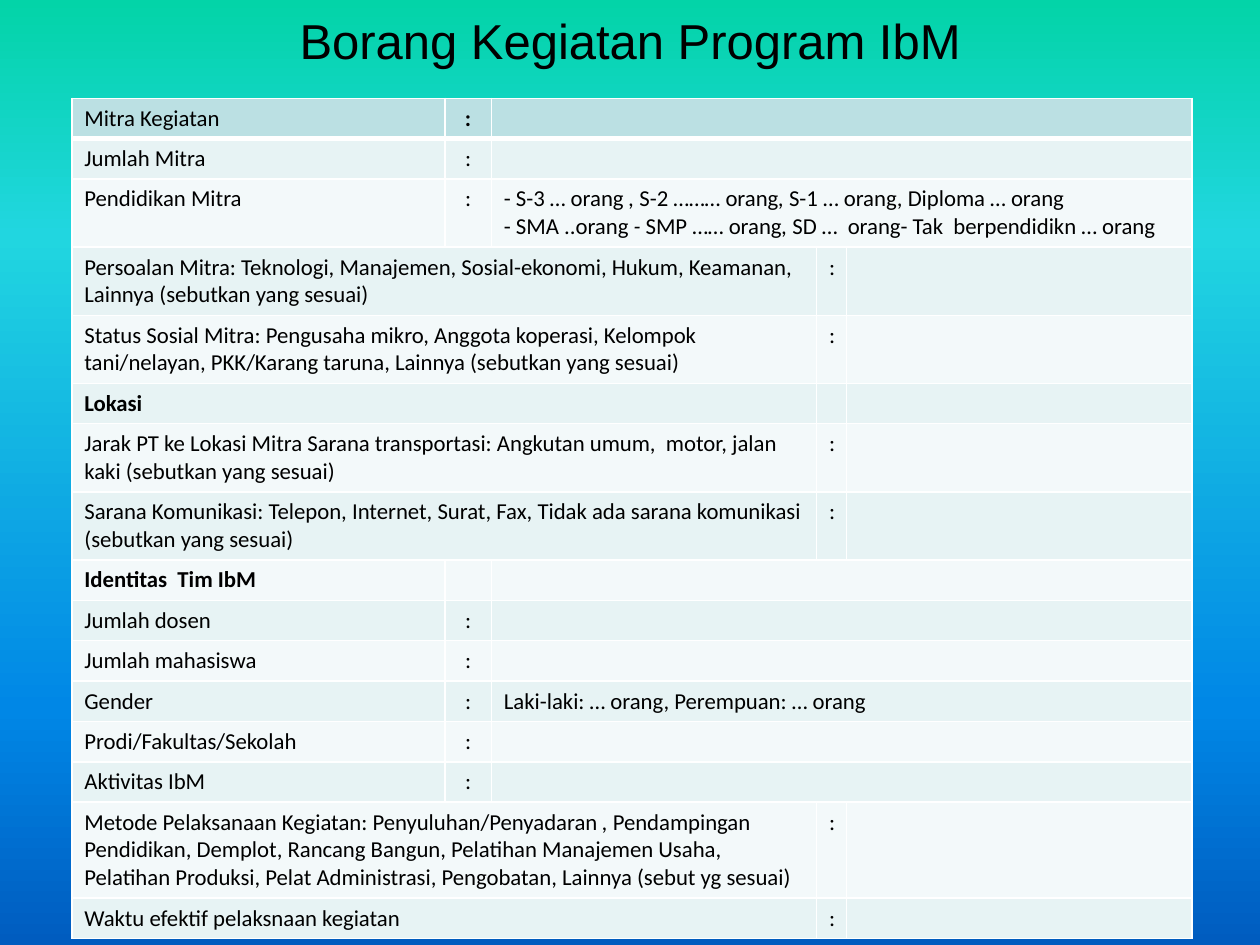
from lxml import etree
from pptx import Presentation
from pptx.dml.color import RGBColor
from pptx.enum.text import MSO_ANCHOR, PP_ALIGN
from pptx.oxml.ns import qn
from pptx.util import Inches, Pt

CENTER = PP_ALIGN.CENTER
LEFT = PP_ALIGN.LEFT
MIDDLE = MSO_ANCHOR.MIDDLE

GRADIENT = [(0, "03D4A8"), (25, "21D6E0"), (75, "0087E6"), (100, "005CBF")]
COLUMN_WIDTHS = [2.96, 0.37, 2.58, 0.23, 2.74]
LINE_HEIGHT = 0.22
CELL_PADDING = 0.1
HEADER_FILL = "BBE0E3"
BAND_FILLS = ["F3F9FA", "E7F3F4"]

NARROW, WIDE = 1, 3
PLAIN, BOLD = False, True
ROWS = [
    (NARROW, 1, PLAIN, "Mitra Kegiatan", ":", ""),
    (NARROW, 1, PLAIN, "Jumlah Mitra", ":", ""),
    (NARROW, 2, PLAIN, "Pendidikan Mitra", ":",
     "- S-3 … orang_ , _S-2 ……… orang_,_ S-1 … orang, Diploma … orang\n"
     "- SMA ..orang_ -_ SMP …… orang_,_ SD …  orang- Tak  berpendidikn … orang"),
    (WIDE, 2, PLAIN, "Persoalan Mitra: Teknologi, Manajemen, Sosial-ekonomi, Hukum, "
     "Keamanan, Lainnya (sebutkan yang sesuai)", ":", ""),
    (WIDE, 2, PLAIN, "Status Sosial Mitra: Pengusaha mikro, Anggota koperasi, Kelompok "
     "tani/nelayan, PKK/Karang taruna, Lainnya (sebutkan yang sesuai)", ":", ""),
    (WIDE, 1, BOLD, "Lokasi", "", ""),
    (WIDE, 2, PLAIN, "Jarak PT ke Lokasi Mitra Sarana transportasi: Angkutan umum,  motor, "
     "jalan kaki (sebutkan yang sesuai)", ":", ""),
    (WIDE, 2, PLAIN, "Sarana Komunikasi: Telepon, Internet, Surat, Fax, Tidak ada sarana "
     "komunikasi (sebutkan yang sesuai)", ":", ""),
    (NARROW, 1, BOLD, "Identitas  Tim IbM", "", ""),
    (NARROW, 1, PLAIN, "Jumlah dosen", ":", ""),
    (NARROW, 1, PLAIN, "Jumlah mahasiswa", ":", ""),
    (NARROW, 1, PLAIN, "Gender", ":", "Laki-laki: … orang, Perempuan: … orang"),
    (NARROW, 1, PLAIN, "Prodi/Fakultas/Sekolah", ":", ""),
    (NARROW, 1, PLAIN, "Aktivitas IbM", ":", ""),
    (WIDE, 3, PLAIN, "Metode Pelaksanaan Kegiatan: Penyuluhan/Penyadaran _, _Pendampingan "
     "Pendidikan, Demplot, Rancang Bangun, Pelatihan Manajemen Usaha, Pelatihan Produksi, "
     "Pelat Administrasi, Pengobatan, Lainnya (sebut yg sesuai)", ":", ""),
    (WIDE, 1, PLAIN, "Waktu efektif pelaksnaan kegiatan", ":", ""),
]


def color(value):
    return RGBColor.from_string(value)


class FormSlide:
    title_font, title_size = "Arial", 28
    table_font, table_size = "Calibri", 13
    text_color, border_color = "000000", "FFFFFF"

    def __init__(self, deck):
        self.page = deck.slides.add_slide(deck.slide_layouts[5])

    def background(self, stops):
        fill = self.page.background.fill
        fill.gradient()
        fill.gradient_angle = 270
        stop_list = self.page.element.find(".//" + qn("a:gsLst"))
        stop_list.clear()
        for percent, value in stops:
            stop = etree.SubElement(stop_list, qn("a:gs"), pos=str(percent * 1000))
            etree.SubElement(stop, qn("a:srgbClr"), val=value)

    def style(self, para, name, size, bold, align):
        para.alignment = align
        font = para.font
        font.name, font.size, font.bold = name, Pt(size), bold
        font.color.rgb = color(self.text_color)

    def title(self, text, left, top, width, height):
        box = self.page.shapes.title
        box.left, box.top = Inches(left), Inches(top)
        box.width, box.height = Inches(width), Inches(height)
        frame = box.text_frame
        frame.text = text
        frame.vertical_anchor = MIDDLE
        self.style(frame.paragraphs[0], self.title_font, self.title_size, False, CENTER)

    def borders(self, cell, bottom):
        properties = cell._tc.get_or_add_tcPr()
        for side, points in (("L", 1), ("R", 1), ("T", 1), ("B", bottom)):
            line = etree.SubElement(properties, qn("a:ln" + side), w=str(Pt(points)))
            fill = etree.SubElement(line, qn("a:solidFill"))
            etree.SubElement(fill, qn("a:srgbClr"), val=self.border_color)

    def cell_text(self, cell, text, bold=False, align=LEFT):
        frame = cell.text_frame
        for index, line in enumerate(text.split("\n")):
            para = frame.add_paragraph() if index else frame.paragraphs[0]
            self.style(para, self.table_font, self.table_size, bold, align)
            if not line:
                etree.SubElement(para._p, qn("a:endParaRPr"), sz=str(self.table_size * 100))
                continue
            for position, part in enumerate(line.split("_")):
                span = para.add_run()
                span.text = part
                if position % 2:
                    span.font.italic = True

    def table(self, rows, left, top, widths):
        heights = [lines * LINE_HEIGHT + CELL_PADDING for _, lines, *_ in rows]
        table = self.page.shapes.add_table(
            len(rows), len(widths), Inches(left), Inches(top),
            Inches(sum(widths)), Inches(sum(heights))).table
        table.first_row = table.horz_banding = False
        for column, width in zip(table.columns, widths):
            column.width = Inches(width)
        for index, (label_span, _, bold, label, colon, answer) in enumerate(rows):
            table.rows[index].height = Inches(heights[index])
            header = index == 0
            for cell in table.rows[index].cells:
                self.borders(cell, 3 if header else 1)
                cell.fill.solid()
                cell.fill.fore_color.rgb = color(HEADER_FILL if header else BAND_FILLS[index % 2])
            first, last = (0, 2) if label_span == WIDE else (2, 4)
            table.cell(index, first).merge(table.cell(index, last))
            self.cell_text(table.cell(index, 0), label, bold)
            self.cell_text(table.cell(index, label_span), colon, header, CENTER)
            self.cell_text(table.cell(index, label_span + 1), answer)


def main():
    deck = Presentation()
    deck.slide_width, deck.slide_height = Inches(10), Inches(7.5)
    form = FormSlide(deck)
    form.background(GRADIENT)
    form.title("Borang Kegiatan Program IbM", 0.5, 0, 9, 0.64)
    form.table(ROWS, 0.57, 0.78, COLUMN_WIDTHS)
    deck.save("out.pptx")


if __name__ == "__main__":
    main()
